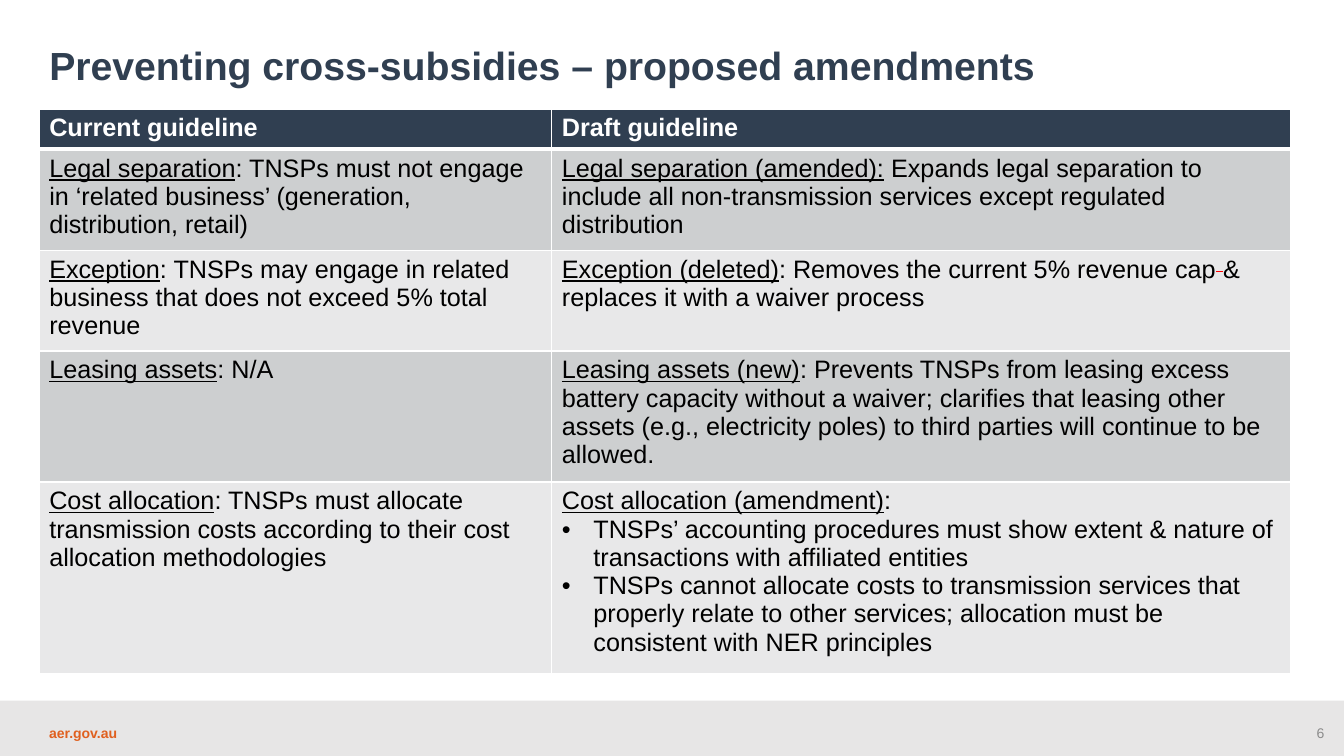
from lxml.etree import SubElement
from pptx import Presentation
from pptx.dml.color import RGBColor
from pptx.enum.shapes import MSO_SHAPE as SHAPE
from pptx.enum.text import MSO_ANCHOR as ANCHOR, PP_ALIGN as ALIGN
from pptx.oxml.ns import qn
from pptx.util import Pt

NAVY, WHITE, BLACK, RED = "303F51", "FFFFFF", "000000", "FF0000"
ORANGE, GREY, FOOTER = "E0601F", "8C8C8C", "E7E6E6"
BANDS = ["CDCFD0", "E8E8E9"]
WIDTH, HEIGHT = 960, 540

HEADINGS = ["Current guideline", "Draft guideline"]
# Each cell: underlined label, pieces that follow it (struck pieces are in red), bullets
ROWS = [
    [("Legal separation", [": TNSPs must not engage in ‘related business’ (generation, distribution, retail)"], []),
     ("Legal separation (amended):",
      [" Expands legal separation to include all non-transmission services except regulated distribution"], [])],
    [("Exception", [": TNSPs may engage in related business that does not exceed 5% total revenue"], []),
     ("Exception (deleted)",
      [": Removes the current 5% revenue cap", " ", "& replaces it with a waiver process"], [])],
    [("Leasing assets", [": N/A"], []),
     ("Leasing assets (new)",
      [": Prevents TNSPs from leasing excess battery capacity without a waiver; clarifies that leasing other "
       "assets (e.g., electricity poles) to third parties will continue to be allowed."], [])],
    [("Cost allocation",
      [": TNSPs must allocate transmission costs according to their cost allocation methodologies"], []),
     ("Cost allocation (amendment)", [":"],
      ["TNSPs’ accounting procedures must show extent & nature of transactions with affiliated entities",
       "TNSPs cannot allocate costs to transmission services that properly relate to other services; "
       "allocation must be consistent with NER principles"])],
]
COLUMNS = [366.2, 527.6]
HEIGHTS = [28.8, 69.1, 69.1, 90, 131]


def rgb(value):
    return RGBColor.from_string(value)


def add_text(p, text, size=18, color=BLACK, bold=False, underline=False, strike=False):
    r = p.add_run()
    r.text = text
    f = r.font
    f.name, f.size, f.bold, f.underline = "Arial", Pt(size), bold, underline
    f.color.rgb = rgb(color)
    if strike:
        r._r.get_or_add_rPr().set("strike", "sngStrike")


def add_bullet(p, indent=22.5):
    pPr = p._p.get_or_add_pPr()
    pPr.set("marL", str(Pt(indent)))
    pPr.set("indent", str(-Pt(indent)))
    SubElement(pPr, qn("a:buFont"), typeface="Arial")
    SubElement(pPr, qn("a:buChar"), char="•")


def set_borders(cell, top=1, bottom=1):
    tcPr = cell._tc.get_or_add_tcPr()
    for side, width in zip("LRTB", [1, 1, top, bottom]):
        ln = SubElement(tcPr, qn("a:ln" + side), w=str(Pt(width)))
        SubElement(SubElement(ln, qn("a:solidFill")), qn("a:srgbClr"), val=WHITE)


def fill_cell(cell, color):
    cell.fill.solid()
    cell.fill.fore_color.rgb = rgb(color)


def add_title(slide, left, top, width, height):
    sp = slide.shapes.title
    sp.left, sp.top, sp.width, sp.height = map(Pt, (left, top, width, height))
    tf = sp.text_frame
    tf.word_wrap, tf.vertical_anchor = True, ANCHOR.BOTTOM
    p = tf.paragraphs[0]
    p.alignment, p.line_spacing = ALIGN.LEFT, 0.9
    add_text(p, "Preventing cross-subsidies – proposed amendments", size=28, color=NAVY, bold=True)


def write_guideline(cell, label, pieces, bullets):
    tf = cell.text_frame
    p = tf.paragraphs[0]
    add_text(p, label, underline=True)
    for piece in pieces:
        struck = piece == " "
        add_text(p, piece, color=RED if struck else BLACK, strike=struck)
    for bullet in bullets:
        p = tf.add_paragraph()
        add_bullet(p)
        add_text(p, bullet)


def add_guidelines(slide, left, top):
    table = slide.shapes.add_table(len(HEIGHTS), len(COLUMNS), Pt(left), Pt(top),
                                   Pt(sum(COLUMNS)), Pt(sum(HEIGHTS))).table
    table.horz_banding = False
    for column, width in zip(table.columns, COLUMNS):
        column.width = Pt(width)
    for row, height in zip(table.rows, HEIGHTS):
        row.height = Pt(height)
    for c, heading in enumerate(HEADINGS):
        cell = table.cell(0, c)
        set_borders(cell, bottom=3)
        fill_cell(cell, NAVY)
        add_text(cell.text_frame.paragraphs[0], heading, color=WHITE, bold=True)
    for i, row in enumerate(ROWS):
        for c, guideline in enumerate(row):
            cell = table.cell(i + 1, c)
            set_borders(cell, top=1 if i else 3)
            fill_cell(cell, BANDS[i % 2])
            write_guideline(cell, *guideline)


def add_label(slide, text, left, top, width, height, align, **fmt):
    tf = slide.shapes.add_textbox(*map(Pt, (left, top, width, height))).text_frame
    tf.word_wrap, tf.vertical_anchor = True, ANCHOR.MIDDLE
    p = tf.paragraphs[0]
    p.alignment = align
    add_text(p, text, size=10, **fmt)


def add_footer(slide, left, top, width, height):
    sp = slide.shapes.add_shape(SHAPE.RECTANGLE, *map(Pt, (left, top, width, height)))
    sp.shadow.inherit = False
    sp.fill.solid()
    sp.fill.fore_color.rgb = rgb(FOOTER)
    sp.line.fill.background()
    y = top + 13.7
    add_label(slide, "aer.gov.au", left + 28, y, 88, 19.4, ALIGN.LEFT, color=ORANGE, bold=True)
    add_label(slide, "6", left + width - 185, y, 178, 19.4, ALIGN.RIGHT, color=GREY)


def main():
    prs = Presentation()
    prs.slide_width, prs.slide_height = Pt(WIDTH), Pt(HEIGHT)
    slide = prs.slides.add_slide(prs.slide_layouts.get_by_name("Title Only"))
    add_footer(slide, 0, 500.4, WIDTH, HEIGHT - 500.4)
    add_title(slide, 28, 13, 837, 54)
    add_guidelines(slide, 28, 77.8)
    prs.save("out.pptx")


if __name__ == "__main__":
    main()
